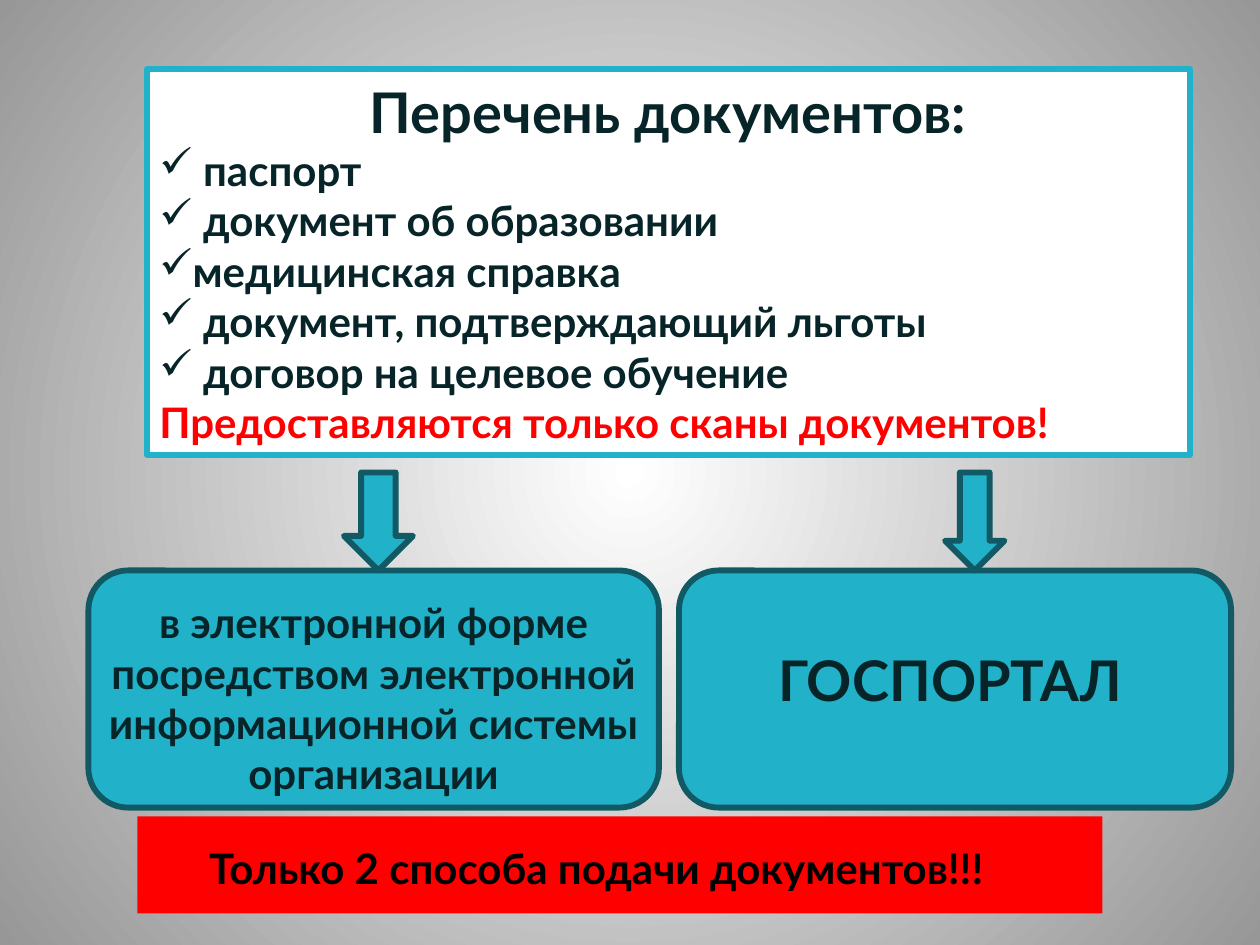
from lxml import etree
from pptx import Presentation
from pptx.dml import color
from pptx.enum import shapes, text
from pptx.oxml import ns
from pptx.util import Pt

HUES = {
    "white": "FFFFFF", "gray": "979797", "teal": "21B2C9", "edge": "115964",
    "ink": "072428", "red": "FF0000", "black": "000000",
}
KIND = shapes.MSO_SHAPE
ALIGN = text.PP_ALIGN
DOCS = [
    ("паспорт", 25),
    ("документ об образовании", 25),
    ("медицинская справка", 19),
    ("документ, подтверждающий льготы", 25),
    ("договор на целевое обучение", 25),
]


def hue(name):
    return color.RGBColor.from_string(HUES[name])


def paint(slide):
    fill = slide.background.fill
    fill.gradient()
    for stop, name, place in zip(fill.gradient_stops, ("white", "gray"), (0, 1)):
        stop.color.rgb = hue(name)
        stop.position = place
    line = next(slide.element.iter(ns.qn("a:lin")))
    ring = etree.Element(ns.qn("a:path"), {"path": "circle"})
    sides = dict.fromkeys("ltrb", "50000")
    etree.SubElement(ring, ns.qn("a:fillToRect"), sides)
    line.getparent().replace(line, ring)


def block(slide, kind, area, fill, edge=None):
    shape = slide.shapes.add_shape(kind, *map(Pt, area))
    shape.shadow.inherit = False
    shape.fill.solid()
    shape.fill.fore_color.rgb = hue(fill)
    if edge:
        shape.line.color.rgb = hue(edge)
        shape.line.width = Pt(3.35)
    else:
        shape.line.fill.background()
    return shape


def write(para, words, size=24, ink="ink", align=ALIGN.CENTER, tick=0):
    para.text = words
    para.alignment = align
    if tick:
        props = para._p.get_or_add_pPr()
        props.set("marL", str(Pt(tick)))
        props.set("indent", str(-Pt(tick)))
        etree.SubElement(props, ns.qn("a:buChar"), {"char": "✓"})
    font = para.font
    font.name = "Lato"
    font.size = Pt(size)
    font.bold = True
    font.color.rgb = hue(ink)


def label(slide, area, words, **style):
    frame = slide.shapes.add_textbox(*map(Pt, area)).text_frame
    frame.word_wrap = True
    write(frame.paragraphs[0], words, **style)


def papers(slide):
    frame = block(slide, KIND.RECTANGLE, (84, 39.5, 596, 220.5), "white", "teal").text_frame
    frame.word_wrap = True
    frame.vertical_anchor = text.MSO_ANCHOR.MIDDLE
    write(frame.paragraphs[0], "Перечень документов:", size=32)
    for words, tick in DOCS:
        write(frame.add_paragraph(), words, align=ALIGN.LEFT, tick=tick)
    write(frame.add_paragraph(), "Предоставляются только сканы документов!",
          ink="red", align=ALIGN.LEFT)


def option(slide, left, width, area, words, size):
    block(slide, KIND.ROUNDED_RECTANGLE, (left, 326, width, 135.5), "teal", "edge")
    label(slide, area, words, size=size)


def main():
    deck = Presentation()
    deck.slide_width, deck.slide_height = Pt(720), Pt(540)
    slide = deck.slides.add_slide(deck.slide_layouts[6])
    paint(slide)
    papers(slide)
    option(slide, 50.5, 326, (44.5, 337.5, 338, 124),
           "в электронной форме посредством электронной информационной системы организации", 24)
    option(slide, 388, 315.5, (422, 365.5, 242, 46), "ГОСПОРТАЛ", 32)
    for left, width in ((196.5, 39.5), (540, 34)):
        block(slide, KIND.DOWN_ARROW, (left, 270, width, 56), "teal", "edge")
    block(slide, KIND.RECTANGLE, (78.5, 466.5, 551.5, 55.5), "red")
    label(slide, (112.5, 478, 546, 36), "Только 2 способа подачи документов!!!",
          ink="black", align=ALIGN.LEFT)
    deck.save("out.pptx")


if __name__ == "__main__":
    main()
